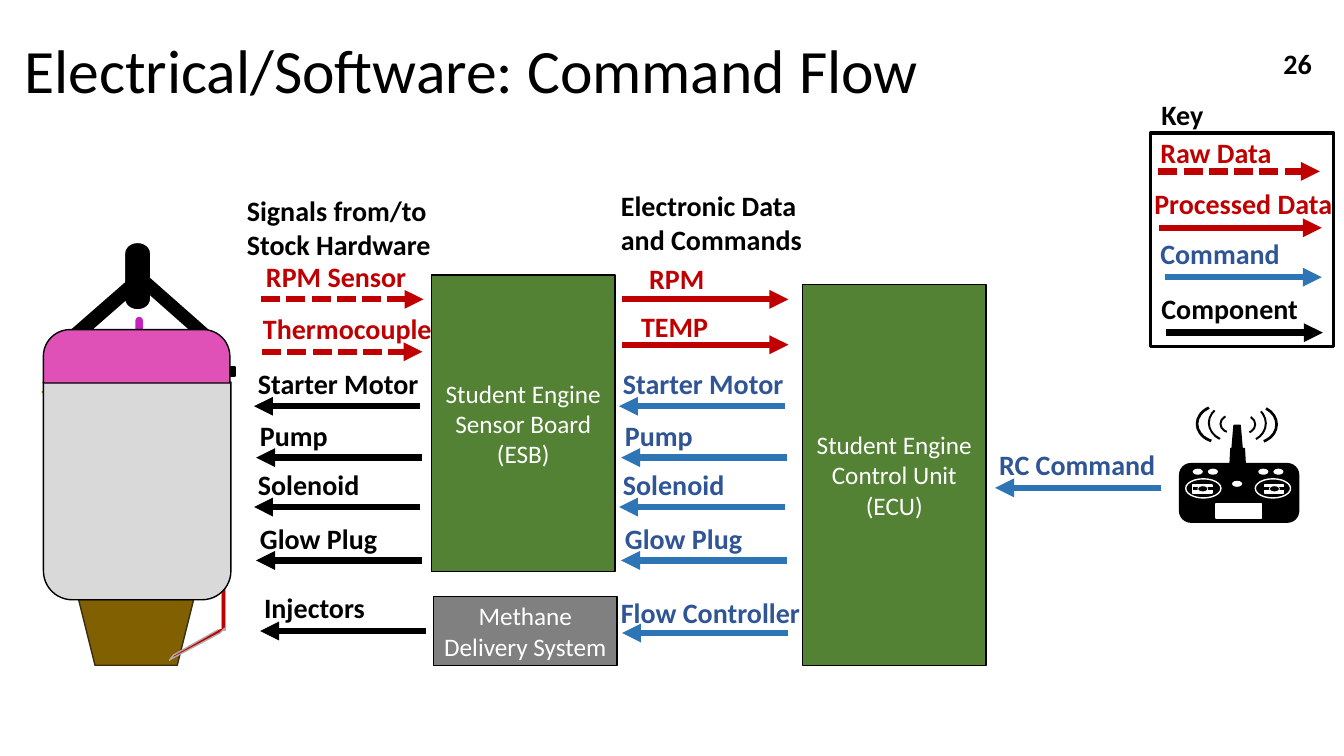
from dataclasses import dataclass
from typing import Optional

from lxml.etree import SubElement
from pptx import Presentation
from pptx.dml.color import RGBColor
from pptx.enum.dml import MSO_LINE
from pptx.enum.shapes import MSO_CONNECTOR, MSO_SHAPE
from pptx.enum.text import MSO_ANCHOR, MSO_AUTO_SIZE, PP_ALIGN
from pptx.oxml.ns import qn
from pptx.util import Pt

PX = 9144  # EMU in one px, 100 px to the inch
FONT = "Calibri"
BLACK, WHITE, RED = "000000", "FFFFFF", "C00000"
BLUE, NAVY, GREEN, GRAY = "2E75B6", "2F5597", "548235", "808080"


@dataclass
class Part:
    kind: MSO_SHAPE
    left: int
    top: int
    width: int
    height: int
    fill: Optional[str] = BLACK
    line: Optional[str] = None
    weight: float = 1
    adjust: tuple[float, ...] = ()
    turn: int = 0
    flip: str = ""
    text: tuple[str, ...] = ()


@dataclass
class Label:
    text: str
    left: int
    top: int
    width: int
    color: str = BLACK
    height: int = 44


@dataclass
class Arrow:
    start: int
    end: int
    y: int
    color: str
    dashed: bool = False


def paint(target, color: str) -> None:
    target.solid()
    target.fore_color.rgb = RGBColor.from_string(color)


def style(para, size: float, color: str, bold: bool = False, align=PP_ALIGN.LEFT) -> None:
    para.alignment = align
    para.font.name = FONT
    para.font.size = Pt(size)
    para.font.bold = bold
    para.font.color.rgb = RGBColor.from_string(color)


def finish(shape, fill: Optional[str], line: Optional[str], weight: float) -> None:
    shape.shadow.inherit = False
    if fill:
        paint(shape.fill, fill)
    else:
        shape.fill.background()
    if line:
        paint(shape.line.fill, line)
        shape.line.width = Pt(weight)
    else:
        shape.line.fill.background()


def draw_part(page, part: Part) -> None:
    shape = page.shapes.add_shape(part.kind, part.left * PX, part.top * PX,
                                  part.width * PX, part.height * PX)
    finish(shape, part.fill, part.line, part.weight)
    for index, value in enumerate(part.adjust):
        shape.adjustments[index] = value
    shape.rotation = part.turn
    for axis in part.flip:
        shape._element.spPr.xfrm.set("flip" + axis, "1")
    if part.text:
        frame = shape.text_frame
        frame.word_wrap = True
        frame.vertical_anchor = MSO_ANCHOR.MIDDLE
        frame.text = "\n".join(part.text)
        for para in frame.paragraphs:
            style(para, 18, WHITE, align=PP_ALIGN.CENTER)


def draw_label(page, label: Label, align=PP_ALIGN.LEFT) -> None:
    box = page.shapes.add_textbox(label.left * PX, label.top * PX,
                                  label.width * PX, label.height * PX)
    box.text_frame.word_wrap = True
    box.text_frame.text = label.text
    style(box.text_frame.paragraphs[0], 20, label.color, True, align)


def draw_line(page, start: int, end: int, y: int, color: str, weight: float):
    line = page.shapes.add_connector(MSO_CONNECTOR.STRAIGHT, start * PX, y * PX, end * PX, y * PX)
    paint(line.line.fill, color)
    line.line.width = Pt(weight)
    return line


def draw_arrow(page, arrow: Arrow) -> None:
    line = draw_line(page, arrow.start, arrow.end, arrow.y, arrow.color, 4.5)
    if arrow.dashed:
        line.line.dash_style = MSO_LINE.SQUARE_DOT
        line.line._ln.find(qn("a:prstDash")).set("val", "sysDash")
    SubElement(line.line._ln, qn("a:tailEnd"), type="triangle")
    SubElement(line._element.spPr, qn("a:effectLst"))


def draw_engine(page) -> None:
    # Nozzle and thermocouple wire
    draw_part(page, Part(MSO_SHAPE.TRAPEZOID, 78, 595, 114, 65, "806000", "392E13", turn=180))
    draw_part(page, Part(MSO_SHAPE.RECTANGLE, 220, 366, 4, 259, RED, "AFABAB"))
    wire = page.shapes.build_freeform(216, 625, scale=PX)
    wire.add_line_segments([(172, 650), (168, 655), (171, 653), (218, 628), (223, 623)], close=False)
    finish(wire.convert_to_shape(), RED, "AFABAB", 1)
    # Intake, mounts and casing
    pill, stripe, casing = (MSO_SHAPE.FLOWCHART_TERMINATOR, MSO_SHAPE.DIAGONAL_STRIPE,
                            MSO_SHAPE.ROUND_2_SAME_RECTANGLE)
    for part in (
        Part(pill, 130, 297, 5, 184, "BF9000", WHITE, turn=90),
        Part(pill, 124, 323, 28, 9, "C521BD", WHITE, turn=90),
        Part(pill, 103, 261, 67, 26, BLACK, WHITE, turn=90),
        Part(stripe, 66, 275, 64, 56, adjust=(0.666,), flip="HV"),
        Part(stripe, 148, 275, 60, 53, adjust=(0.674,), flip="V"),
        Part(MSO_SHAPE.RECTANGLE, 222, 364, 11, 9, line=BLACK),
        Part(casing, 43, 379, 186, 216, "D9D9D9", BLACK, adjust=(0.154, 0), turn=180),
        Part(casing, 43, 327, 185, 53, "DF51B6", BLACK, adjust=(0.5, 0)),
    ):
        draw_part(page, part)


def draw_transmitter(page) -> None:
    oval, rect, mast = MSO_SHAPE.OVAL, MSO_SHAPE.RECTANGLE, MSO_SHAPE.TRAPEZOID
    draw_part(page, Part(MSO_SHAPE.ROUNDED_RECTANGLE, 1170, 460, 118, 58, line=BLACK, adjust=(0.192,)))
    # Joysticks
    for ring, stick in ((1176, 1183), (1245, 1254)):
        draw_part(page, Part(oval, ring, 475, 35, 19, line=WHITE))
        draw_part(page, Part(rect, stick, 481, 19, 8, WHITE, WHITE))
        bar = draw_line(page, stick, stick + 20, 485, BLACK, 2.25)
        SubElement(bar._element.spPr, qn("a:effectLst"))
        draw_part(page, Part(oval, stick + 5, 482, 10, 6, line=WHITE, weight=0.5))
    # Screen, buttons and antenna
    draw_part(page, Part(rect, 1206, 500, 45, 14, WHITE, WHITE))
    for left, top in ((1183, 465), (1198, 465), (1248, 465), (1263, 465), (1222, 477)):
        draw_part(page, Part(oval, left, top, 10, 6, WHITE))
    draw_part(page, Part(mast, 1220, 445, 15, 15, line=BLACK, adjust=(0.054,)))
    draw_part(page, Part(mast, 1222, 422, 10, 23, line=BLACK, adjust=(0.195,)))
    # Radio waves: inner, middle and outer arc on each side
    arcs = ((117.353, 200.616, 0.109), (129.464, 183.84, 0.051), (123.255, 196.343, 0.068))
    left_side = ((1210, 411, 18, 19), (1202, 396, 39, 47), (1190, 397, 39, 47))
    right_side = ((1228, 412, 18, 18), (1215, 398, 39, 44), (1226, 399, 39, 44))
    for places, turn, flip in ((left_side, 270, ""), (right_side, 90, "H")):
        for place, adjust in zip(places, arcs):
            draw_part(page, Part(MSO_SHAPE.BLOCK_ARC, *place, adjust=adjust, turn=turn, flip=flip))


def draw_command(page, text: str, left: int, top: int, y: int, ink: str, stroke: str) -> None:
    draw_arrow(page, Arrow(left + 171, left + 6, y, stroke))
    draw_label(page, Label(text, left, top, 182, ink))


def main() -> None:
    deck = Presentation()
    deck.slide_width, deck.slide_height = 1333 * PX, 750 * PX
    page = deck.slides.add_slide(deck.slide_layouts[5])

    # Title and page number
    title = page.shapes.title
    title.left, title.top, title.width, title.height = 14 * PX, 0, 1150 * PX, 145 * PX
    frame = title.text_frame
    frame.text = "Electrical/Software: Command Flow"
    frame.word_wrap, frame.auto_size = True, MSO_AUTO_SIZE.NONE
    frame.vertical_anchor = MSO_ANCHOR.MIDDLE
    style(frame.paragraphs[0], 44, BLACK)
    frame.paragraphs[0].line_spacing = 0.9
    draw_label(page, Label("26", 1011, 41, 300, height=40), PP_ALIGN.RIGHT)

    draw_engine(page)
    draw_transmitter(page)

    # Boards, delivery system and key frame
    rect = MSO_SHAPE.RECTANGLE
    for part in (
        Part(rect, 796, 282, 182, 378, GREEN, BLACK, text=("Student Engine Control Unit", "(ECU)")),
        Part(rect, 428, 273, 182, 294, GREEN, BLACK, text=("Student Engine Sensor Board", "(ESB)")),
        Part(rect, 430, 592, 182, 68, GRAY, BLACK, text=("Methane Delivery System",)),
        Part(rect, 1141, 132, 182, 212, None, BLACK, 2.25),
    ):
        draw_part(page, part)

    # Commands shared by both columns
    for left, ink, stroke in ((246, BLACK, BLACK), (608, NAVY, BLUE)):
        for text, shift, top, y in (("Starter Motor", 0, 359, 403), ("Pump", 2, 410, 454),
                                    ("Solenoid", 0, 459, 503), ("Glow Plug", 2, 512, 556)):
            draw_command(page, text, left + shift, top, y, ink, stroke)
    draw_command(page, "Injectors", 252, 581, 626, BLACK, BLACK)
    draw_command(page, "RC Command", 981, 439, 484, NAVY, BLUE)

    # Sensor data, flow control and key arrows
    for arrow in (
        Arrow(259, 420, 297, RED, True), Arrow(260, 419, 349, RED, True),
        Arrow(617, 782, 297, RED), Arrow(617, 782, 342, RED), Arrow(782, 617, 628, BLUE),
        Arrow(1149, 1309, 170, RED, True), Arrow(1150, 1311, 226, RED),
        Arrow(1155, 1311, 275, BLUE), Arrow(1156, 1312, 330, BLACK),
    ):
        draw_arrow(page, arrow)

    # Remaining labels
    for label in (
        Label("RPM Sensor", 254, 253, 180, RED), Label("Thermocouple", 251, 304, 201, RED),
        Label("RPM", 634, 255, 108, RED), Label("TEMP", 626, 302, 97, RED),
        Label("Flow Controller", 606, 586, 272, NAVY),
        Label("Key", 1142, 92, 182), Label("Raw Data", 1141, 130, 210, RED),
        Label("Processed Data", 1135, 180, 210, RED), Label("Command", 1141, 230, 182, NAVY),
        Label("Component", 1142, 284, 182),
        Label("Electronic Data and Commands", 606, 182, 221, height=77),
        Label("Signals from/to Stock Hardware", 235, 187, 219, height=77),
    ):
        draw_label(page, label)

    deck.save("out.pptx")


if __name__ == "__main__":
    main()
